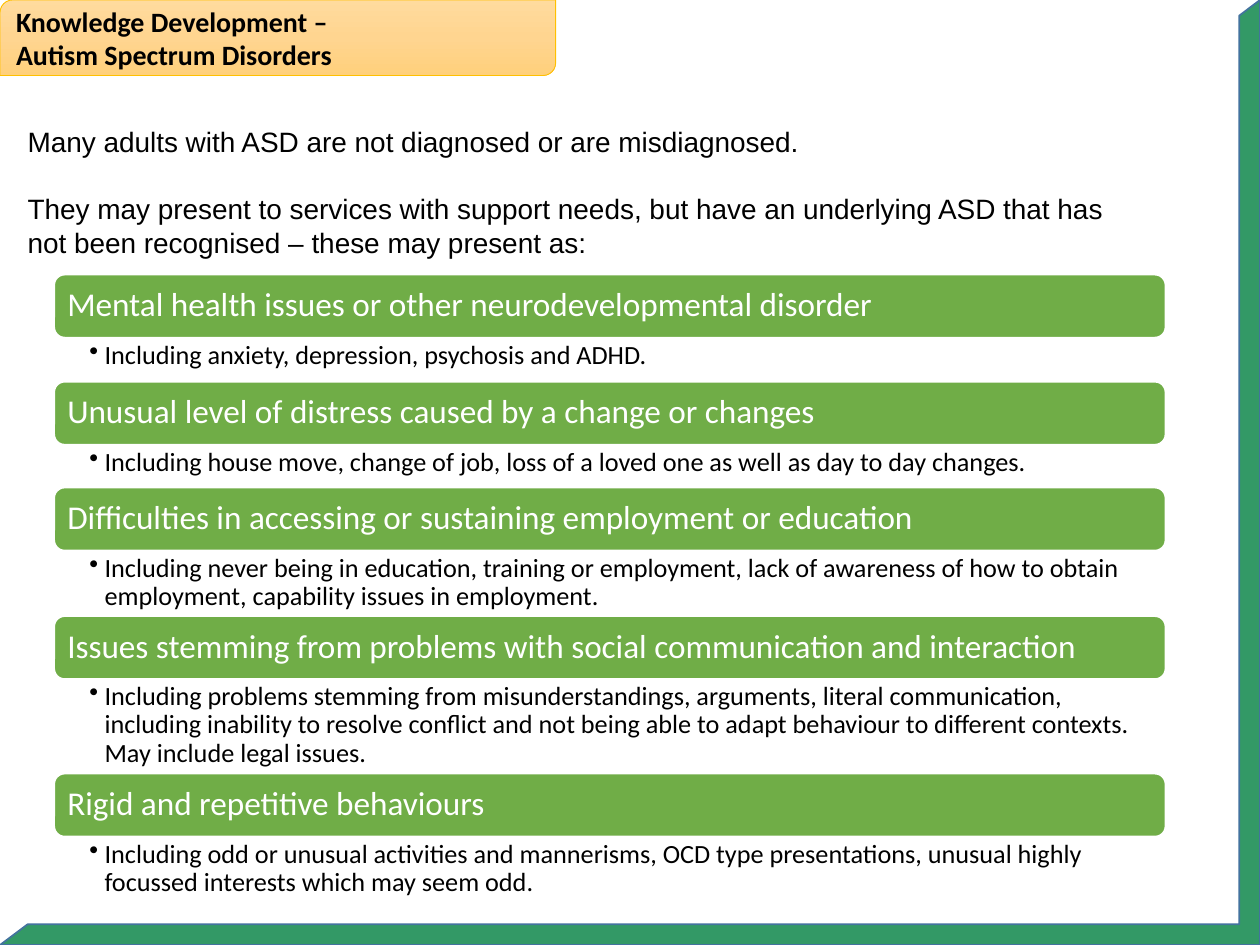
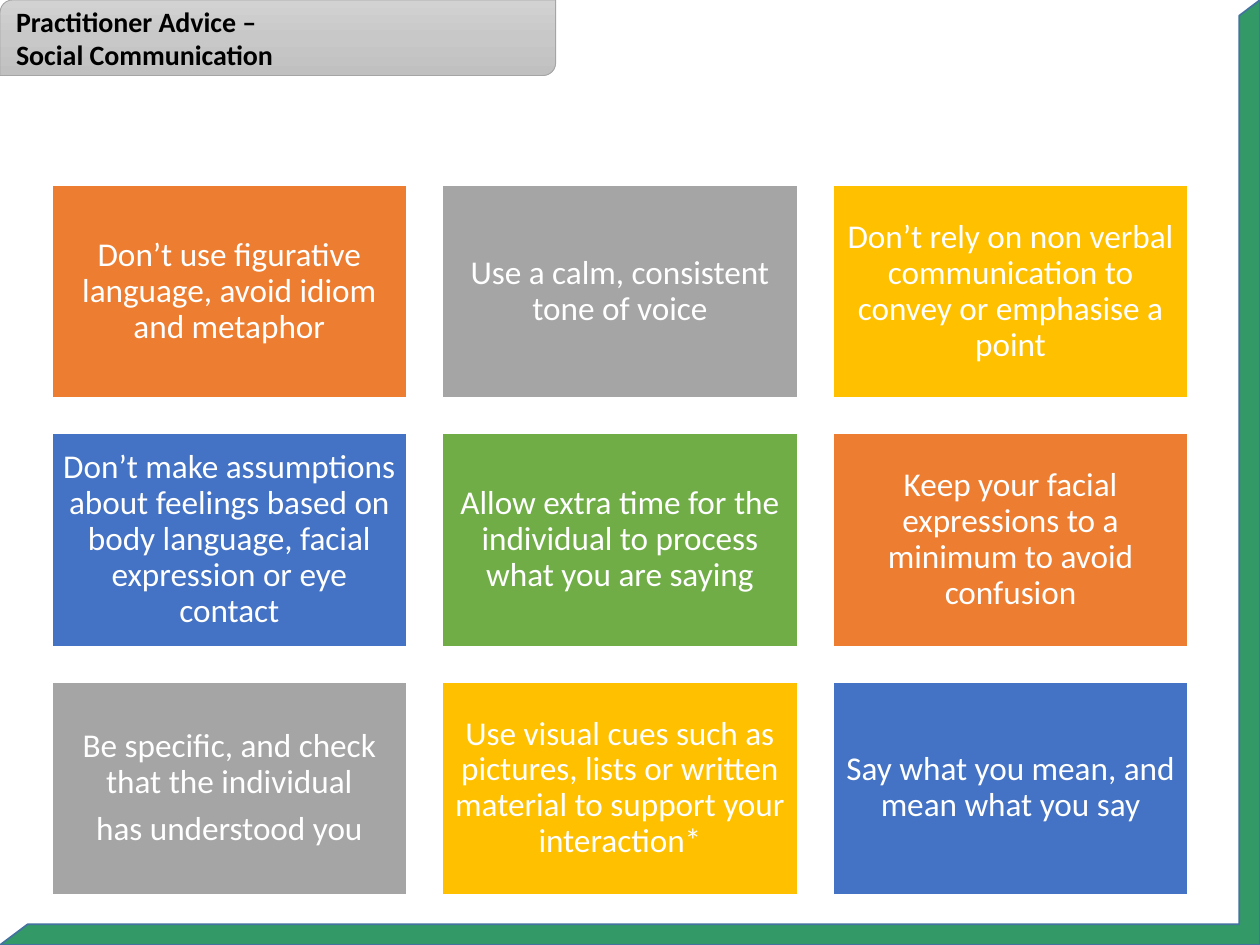
from copy import deepcopy

from pptx import Presentation
from pptx.dml.color import RGBColor
from pptx.enum.shapes import MSO_SHAPE
from pptx.enum.text import MSO_ANCHOR, PP_ALIGN
from pptx.oxml.ns import qn
from pptx.util import Inches, Pt

HALF_FRAME, RECTANGLE = MSO_SHAPE.HALF_FRAME, MSO_SHAPE.RECTANGLE
ROUNDED, BANNER = MSO_SHAPE.ROUNDED_RECTANGLE, MSO_SHAPE.ROUND_2_DIAG_RECTANGLE
TOP, MIDDLE = MSO_ANCHOR.TOP, MSO_ANCHOR.MIDDLE
LEFT, CENTER = PP_ALIGN.LEFT, PP_ALIGN.CENTER

WHITE = RGBColor(0xFF, 0xFF, 0xFF)
BLACK = RGBColor(0x00, 0x00, 0x00)
FRAME_GREEN = RGBColor(0x33, 0x99, 0x66)
FRAME_EDGE = RGBColor(0x43, 0x73, 0x9E)
ORANGE = RGBColor(0xED, 0x7D, 0x31)
GREY = RGBColor(0xA5, 0xA5, 0xA5)
GOLD = RGBColor(0xFF, 0xC0, 0x00)
BLUE = RGBColor(0x44, 0x72, 0xC4)
GREEN = RGBColor(0x70, 0xAD, 0x47)
GOLD_FADE = [RGBColor(0xFF, 0xDB, 0x9E), RGBColor(0xFF, 0xD5, 0x90), RGBColor(0xFF, 0xD0, 0x7C)]
GREY_FADE = [RGBColor(0xD2, 0xD2, 0xD2), RGBColor(0xC8, 0xC8, 0xC8), RGBColor(0xC0, 0xC0, 0xC0)]

# Content: slide 1
KNOWLEDGE_TITLE = ["Knowledge Development –", "Autism Spectrum Disorders"]
INTRO = [
    "Many adults with ASD are not diagnosed or are misdiagnosed.",
    "They may present to services with support needs, but have an underlying ASD "
    "that has not been recognised – these may present as:",
]
# heading, detail, height of the detail
PRESENTATIONS = [
    ("Mental health issues or other neurodevelopmental disorder",
     "Including anxiety, depression, psychosis and ADHD.", 0.35),
    ("Unusual level of distress caused by a change or changes",
     "Including house move, change of job, loss of a loved one as well as day to day changes.",
     0.34),
    ("Difficulties in accessing or sustaining employment or education",
     "Including never being in education, training or employment, lack of awareness of "
     "how to obtain employment, capability issues in employment.", 0.52),
    ("Issues stemming from problems with social communication and interaction",
     "Including problems stemming from misunderstandings, arguments, literal communication, "
     "including inability to resolve conflict and not being able to adapt behaviour to "
     "different contexts. May include legal issues.", 0.75),
    ("Rigid and repetitive behaviours",
     "Including odd or unusual activities and mannerisms, OCD type presentations, "
     "unusual highly focussed interests which may seem odd.", 0.52),
]

# Content: slide 2
ADVICE_TITLE = ["Practitioner Advice –", "Social Communication"]
ADVICE = [
    (ORANGE, ["Don’t use figurative language, avoid idiom and metaphor"]),
    (GREY, ["Use a calm, consistent tone of voice"]),
    (GOLD, ["Don’t rely on non verbal communication to convey or emphasise a point"]),
    (BLUE, ["Don’t make assumptions about feelings based on body language, "
            "facial expression or eye contact"]),
    (GREEN, ["Allow extra time for the individual to process what you are saying"]),
    (ORANGE, ["Keep your facial expressions to a minimum to avoid confusion"]),
    (GREY, ["Be specific, and check that the individual", "has understood you"]),
    (GOLD, ["Use visual cues such as pictures, lists or written material "
            "to support your interaction*"]),
    (BLUE, ["Say what you mean, and mean what you say"]),
]

# Layout, in inches
SLIDE_WIDTH, SLIDE_HEIGHT = 10, 7.5
LIST_LEFT, LIST_TOP, LIST_WIDTH, HEADING_HEIGHT = 0.43, 2.18, 8.82, 0.5
GRID_LEFT, GRID_TOP, GRID_COLUMNS = 0.41, 1.47, 3
TILE_WIDTH, TILE_HEIGHT, TILE_GAP = 2.82, 1.69, 0.28

# Text formats
DEFAULT_INSETS = (0.1, 0.05, 0.1, 0.05)
TILE_INSETS = (0.08,) * 4
DETAIL_INSETS = (0.28, 0.03, 0.15, 0.03)
TITLE_FONT = {"name": "Calibri", "size": Pt(16), "bold": True}
INTRO_FONT = {"name": "Arial", "size": Pt(16)}
HEADING_FONT = {"name": "Calibri", "size": Pt(19)}
DETAIL_FONT = {"name": "Calibri", "size": Pt(15)}
TIGHT = {"line_spacing": 0.9, "space_after": Pt(6.65)}


def write(shape, lines, font, color, anchor=MIDDLE, insets=DEFAULT_INSETS,
          spacing=None, bullet=False):
    frame = shape.text_frame
    frame.word_wrap = True
    frame.vertical_anchor = anchor
    for side, inset in zip(("left", "top", "right", "bottom"), insets):
        setattr(frame, f"margin_{side}", Inches(inset))
    for index, line in enumerate(lines):
        paragraph = frame.paragraphs[0] if index == 0 else frame.add_paragraph()
        paragraph.text = line
        paragraph.alignment = LEFT
        for name, value in (spacing or {}).items():
            if index or name != "space_before":
                setattr(paragraph, name, value)
        if bullet:
            properties = paragraph._p.get_or_add_pPr()
            properties.set("marL", str(Inches(0.12)))
            properties.set("indent", str(-Inches(0.12)))
            properties.append(properties.makeelement(qn("a:buChar"), {"char": "•"}))
        for name, value in font.items():
            setattr(paragraph.font, name, value)
        paragraph.font.color.rgb = color


def add_shape(slide, kind, box, line_color, line_width=1, fill=None):
    shape = slide.shapes.add_shape(kind, *map(Inches, box))
    shape.shadow.inherit = False
    if fill is not None:
        shape.fill.solid()
        shape.fill.fore_color.rgb = fill
    shape.line.color.rgb = line_color
    shape.line.width = Pt(line_width)
    return shape


def add_text(slide, box, lines, font, **options):
    write(slide.shapes.add_textbox(*map(Inches, box)), lines, font, BLACK,
          anchor=TOP, **options)


def add_frame(slide):
    frame = add_shape(slide, HALF_FRAME, (0, 0, SLIDE_WIDTH, SLIDE_HEIGHT),
                      FRAME_EDGE, fill=FRAME_GREEN)
    frame.rotation = 180
    frame.adjustments[0] = frame.adjustments[1] = 0.022


def add_banner(slide, title, fade, edge):
    banner = add_shape(slide, BANNER, (0, 0, 4.41, 0.6), edge, line_width=0.5)
    banner.fill.gradient()
    banner.fill.gradient_angle = 270
    # A middle stop joins the two default ones
    stops = banner._element.spPr.find(".//" + qn("a:gsLst"))
    stops.insert(1, deepcopy(stops[0]))
    for stop, color, position in zip(banner.fill.gradient_stops, fade, (0, 0.5, 1)):
        stop.color.rgb = color
        stop.position = position
    write(banner, title, TITLE_FONT, BLACK)


def add_slide(presentation, title, fade, edge):
    slide = presentation.slides.add_slide(presentation.slide_layouts[6])
    add_frame(slide)
    add_banner(slide, title, fade, edge)
    return slide


def build_knowledge(presentation):
    slide = add_slide(presentation, KNOWLEDGE_TITLE, GOLD_FADE, GOLD)
    add_text(slide, (0.12, 0.94, 8.98, 1.18), INTRO, INTRO_FONT,
             spacing={"space_before": Pt(19)})
    top = LIST_TOP
    for heading, detail, detail_height in PRESENTATIONS:
        bar = add_shape(slide, ROUNDED, (LIST_LEFT, top, LIST_WIDTH, HEADING_HEIGHT),
                        WHITE, fill=GREEN)
        write(bar, [heading], HEADING_FONT, WHITE, insets=TILE_INSETS, spacing=TIGHT)
        top += HEADING_HEIGHT
        add_text(slide, (LIST_LEFT, top, LIST_WIDTH, detail_height), [detail], DETAIL_FONT,
                 insets=DETAIL_INSETS, spacing={"line_spacing": 0.9}, bullet=True)
        top += detail_height


def build_advice(presentation):
    slide = add_slide(presentation, ADVICE_TITLE, GREY_FADE, GREY)
    for index, (color, lines) in enumerate(ADVICE):
        row, column = divmod(index, GRID_COLUMNS)
        box = (GRID_LEFT + column * (TILE_WIDTH + TILE_GAP),
               GRID_TOP + row * (TILE_HEIGHT + TILE_GAP), TILE_WIDTH, TILE_HEIGHT)
        tile = add_shape(slide, RECTANGLE, box, WHITE, fill=color)
        write(tile, lines, HEADING_FONT, WHITE, insets=TILE_INSETS,
              spacing={**TIGHT, "alignment": CENTER})


def main():
    presentation = Presentation()
    presentation.slide_width = Inches(SLIDE_WIDTH)
    presentation.slide_height = Inches(SLIDE_HEIGHT)
    build_knowledge(presentation)
    build_advice(presentation)
    presentation.save("out.pptx")


if __name__ == "__main__":
    main()
